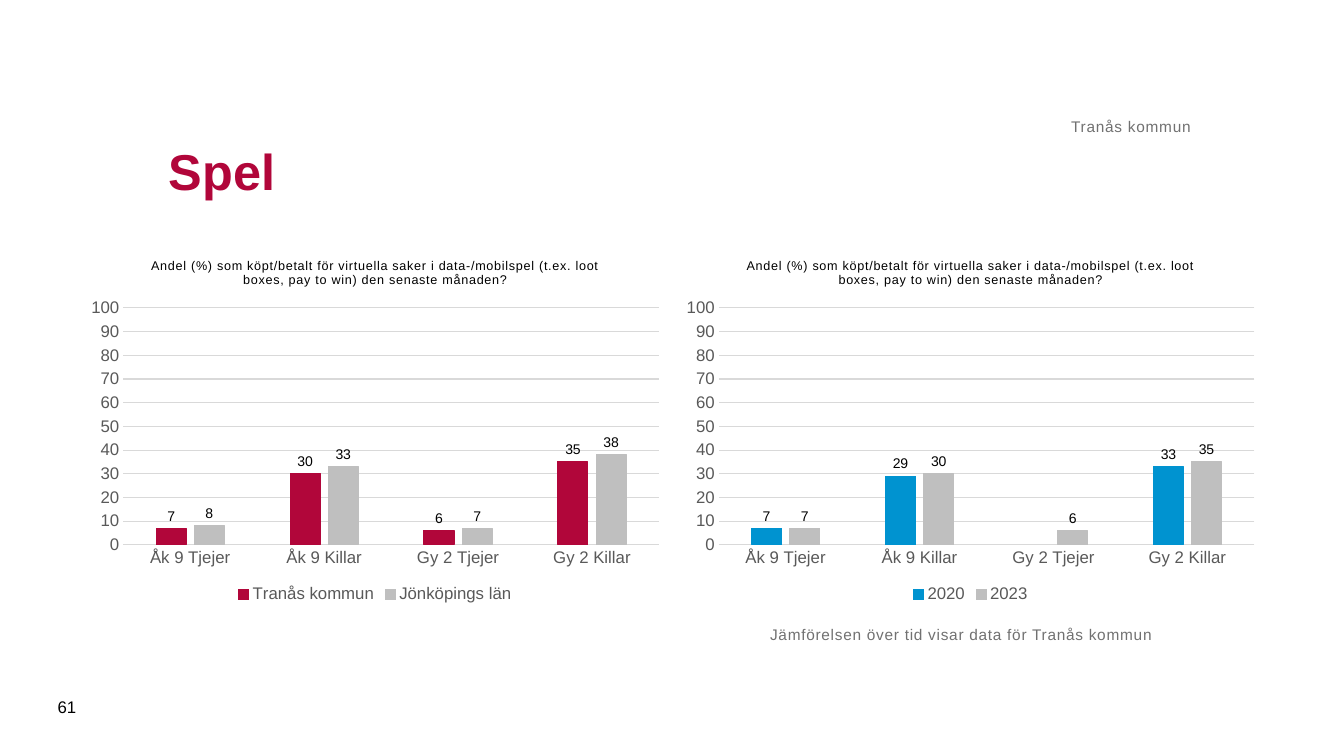
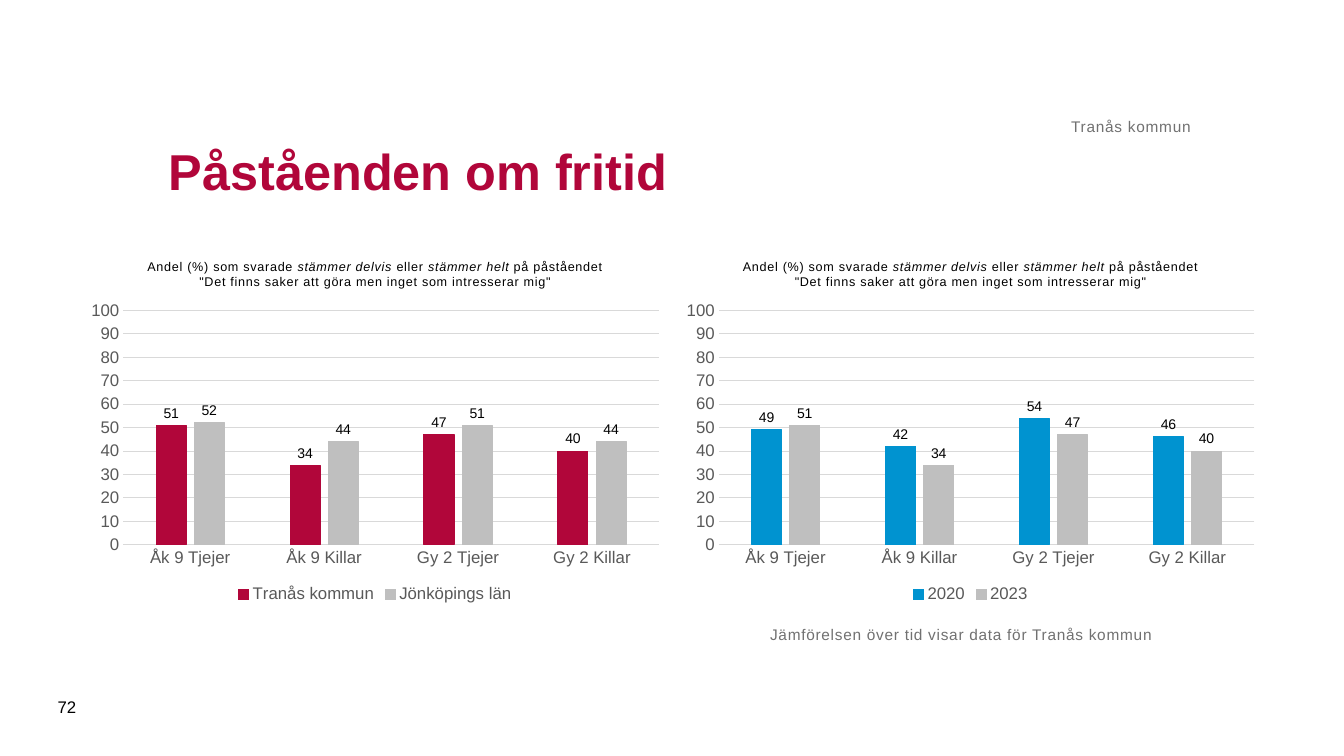
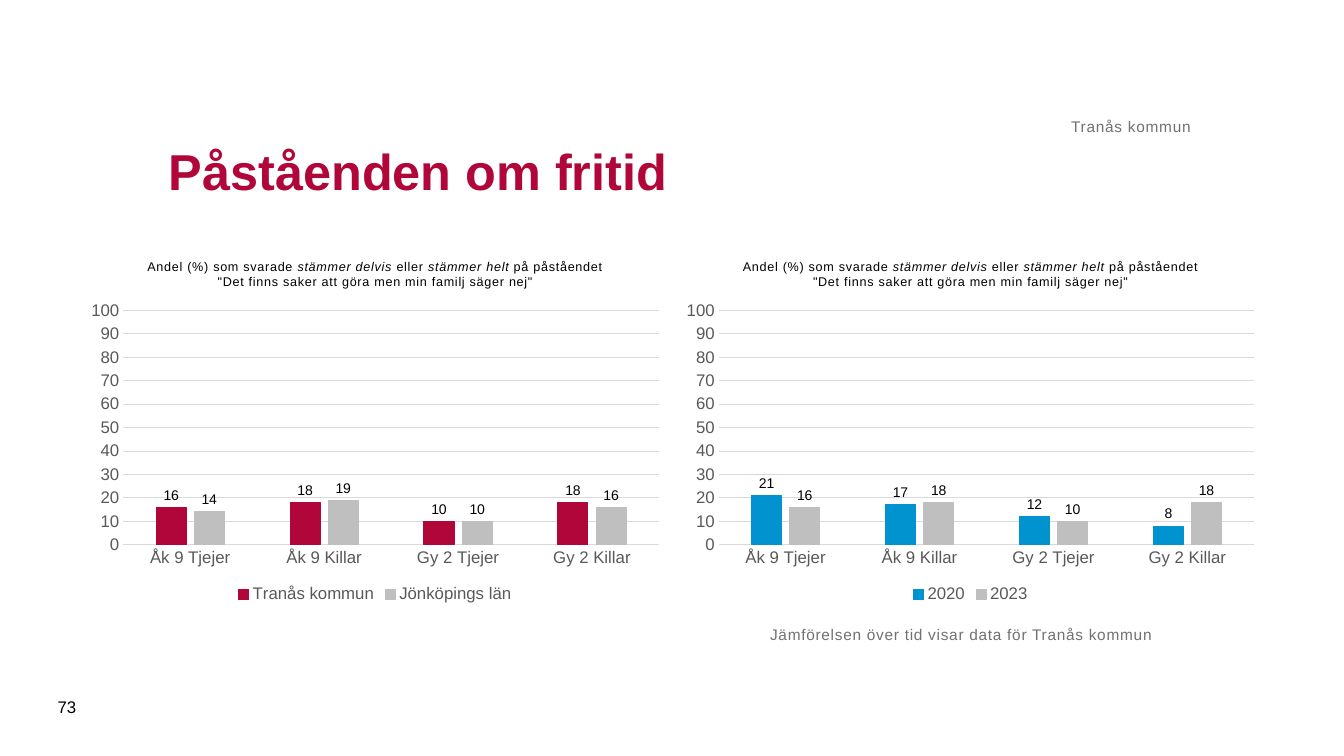
from dataclasses import dataclass

from pptx import Presentation
from pptx.chart.data import CategoryChartData
from pptx.dml.color import RGBColor
from pptx.enum.chart import XL_CHART_TYPE as ChartType
from pptx.enum.chart import XL_LABEL_POSITION as LabelPosition
from pptx.enum.chart import XL_LEGEND_POSITION as LegendPosition
from pptx.enum.chart import XL_TICK_MARK as TickMark
from pptx.enum.text import MSO_ANCHOR as Anchor
from pptx.enum.text import PP_ALIGN as Align
from pptx.util import Cm, Inches, Pt


@dataclass(frozen=True)
class Theme:
    font: str = "Arial"
    crimson: RGBColor = RGBColor.from_string("B1063A")
    blue: RGBColor = RGBColor.from_string("0093D0")
    silver: RGBColor = RGBColor.from_string("BFBFBF")
    grid: RGBColor = RGBColor.from_string("D9D9D9")
    axis: RGBColor = RGBColor.from_string("595959")
    note: RGBColor = RGBColor.from_string("717171")
    black: RGBColor = RGBColor.from_string("000000")
    title_size: int = 36
    axis_size: int = 12
    note_size: int = 11
    label_size: int = 10
    question_size: int = 9
    hairline: float = 0.75
    spacing: str = "50"  # hundredths of a point between letters


THEME = Theme()
GRID = Cm(1)  # width of a column and height of a row
CHART_COLUMNS, CHART_PITCH = 14.9, 15
NUMBER_FORMAT = "#,##0;#,##0"
GROUPS = ["Åk 9 Tjejer", "Åk 9 Killar", "Gy 2 Tjejer", "Gy 2 Killar"]
MUNICIPALITY = "Tranås kommun"
COUNTY = "Jönköpings län"
TIME_NOTE = "Jämförelsen över tid visar data för Tranås kommun"
STATEMENT = "Andel (%) som svarade *stämmer delvis* eller *stämmer helt* på påståendet "

# Words between asterisks in a question are set in italics.
PAGES = [
    dict(
        number=61,
        title="Spel",
        question="Andel (%) som köpt/betalt för virtuella saker i data-/mobilspel "
        "(t.ex. loot boxes, pay to win) den senaste månaden?",
        now=[7, 30, 6, 35],
        county=[8, 33, 7, 38],
        before=[7, 29, None, 33],
    ),
    dict(
        number=72,
        title="Påståenden om fritid",
        question=STATEMENT + '"Det finns saker att göra men inget som intresserar mig"',
        now=[51, 34, 47, 40],
        county=[52, 44, 51, 44],
        before=[49, 42, 54, 46],
    ),
    dict(
        number=73,
        title="Påståenden om fritid",
        question=STATEMENT + '"Det finns saker att göra men min familj säger nej"',
        now=[16, 18, 10, 18],
        county=[14, 19, 10, 16],
        before=[21, 17, 12, 8],
    ),
]


def style(font, size, color, bold=False):
    font.name, font.size, font.bold = THEME.font, Pt(size), bold
    font.color.rgb = color


def cells(*counts):
    """Turn counts of grid columns and rows into lengths."""
    return [round(count * GRID) for count in counts]


deck = Presentation()
deck.slide_width, deck.slide_height = Inches(13.33), Inches(7.5)
title_only = deck.slide_layouts[5]

for page in PAGES:
    slide = deck.slides.add_slide(title_only)

    title = slide.shapes.title
    title.left, title.top, title.width, title.height = cells(4, 2.5, 26, 3.6)
    title.text_frame.text = page["title"]
    title.text_frame.vertical_anchor = Anchor.MIDDLE
    heading = title.text_frame.paragraphs[0]
    heading.alignment = Align.LEFT
    style(heading.runs[0].font, THEME.title_size, THEME.crimson, bold=True)

    comparisons = [
        [(MUNICIPALITY, page["now"], THEME.crimson), (COUNTY, page["county"], THEME.silver)],
        [("2020", page["before"], THEME.blue), ("2023", page["now"], THEME.silver)],
    ]
    for position, comparison in enumerate(comparisons):
        data = CategoryChartData(number_format=NUMBER_FORMAT)
        data.categories = GROUPS
        for name, shares, _ in comparison:
            data.add_series(name, shares)
        area = cells(2 + position * CHART_PITCH, 6.1, CHART_COLUMNS, 9.2)
        chart = slide.shapes.add_chart(ChartType.COLUMN_CLUSTERED, *area, data).chart
        style(chart.font, THEME.label_size, THEME.black)

        chart.has_title = True
        question = chart.chart_title.text_frame.paragraphs[0]
        for index, part in enumerate(page["question"].split("*")):
            words = question.add_run()
            words.text = part
            style(words.font, THEME.question_size, THEME.black)
            words.font.italic = index % 2 == 1
            words._r.get_or_add_rPr().set("spc", THEME.spacing)

        chart.has_legend = True
        chart.legend.position = LegendPosition.BOTTOM
        chart.legend.include_in_layout = False
        style(chart.legend.font, THEME.axis_size, THEME.axis)

        for axis in (chart.category_axis, chart.value_axis):
            axis.major_tick_mark = axis.minor_tick_mark = TickMark.NONE
            style(axis.tick_labels.font, THEME.axis_size, THEME.axis)
        percent = chart.value_axis
        percent.minimum_scale, percent.maximum_scale, percent.major_unit = 0, 100, 10
        percent.tick_labels.number_format = NUMBER_FORMAT
        percent.tick_labels.number_format_is_linked = False
        percent.format.line.fill.background()
        percent.has_major_gridlines = True
        for line in (chart.category_axis.format.line, percent.major_gridlines.format.line):
            line.color.rgb = THEME.grid
            line.width = Pt(THEME.hairline)

        plot = chart.plots[0]
        plot.gap_width, plot.overlap, plot.vary_by_categories = 219, -27, False
        for series, (_, _, color) in zip(plot.series, comparison):
            series.format.fill.solid()
            series.format.fill.fore_color.rgb = color
            series.format.line.color.rgb = color
            series.format.line.width = Pt(THEME.hairline)
            labels = series.data_labels
            labels.show_value = True
            labels.position = LabelPosition.OUTSIDE_END
            labels.number_format = NUMBER_FORMAT
            labels.number_format_is_linked = False
            style(labels.font, THEME.label_size, THEME.black)

    notes = [
        (TIME_NOTE, cells(19.4, 15.75, 13.5, 2.4), Anchor.TOP, Align.LEFT),
        (MUNICIPALITY, cells(4, 1.57, 26, 1.85), Anchor.BOTTOM, Align.RIGHT),
    ]
    for text, area, anchor, alignment in notes:
        frame = slide.shapes.add_textbox(*area).text_frame
        frame.word_wrap = True
        frame.margin_left = frame.margin_top = frame.margin_right = frame.margin_bottom = 0
        frame.vertical_anchor = anchor
        frame.text = text
        note = frame.paragraphs[0]
        note.alignment = alignment
        style(note.runs[0].font, THEME.note_size, THEME.note)
        note.runs[0]._r.get_or_add_rPr().set("spc", THEME.spacing)

    page_number = slide.shapes.add_textbox(*cells(1.2, 17.3, 1.45, 1)).text_frame
    page_number.word_wrap = True
    page_number.vertical_anchor = Anchor.MIDDLE
    page_number.text = str(page["number"])
    style(page_number.paragraphs[0].runs[0].font, THEME.axis_size, THEME.black)

deck.save("out.pptx")
